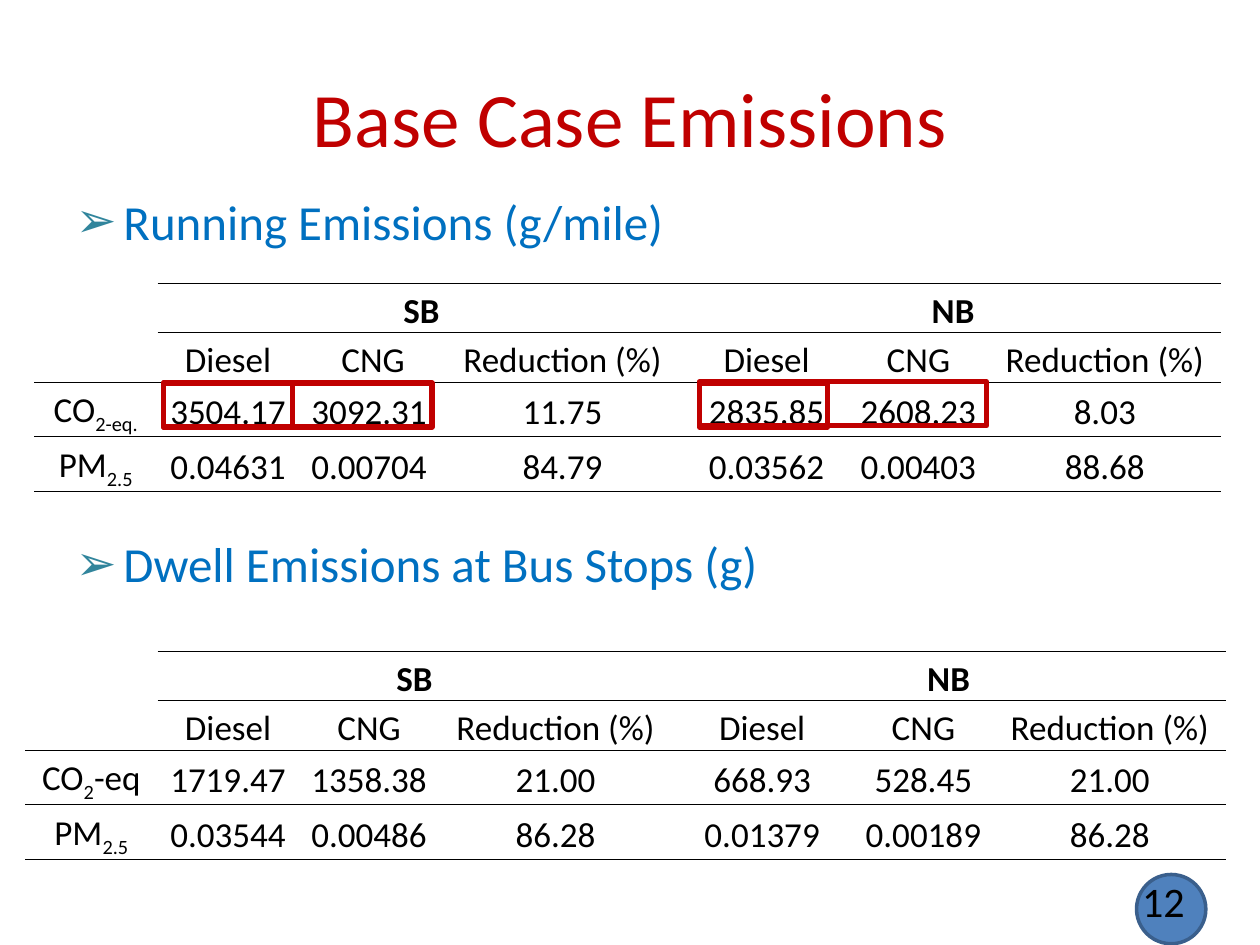
"""Build the base case emissions slide with its two emission tables."""
from dataclasses import dataclass

import lxml.etree
import pptx
import pptx.dml.color
import pptx.enum.shapes
import pptx.enum.text
import pptx.oxml.ns
import pptx.util

COLORS = {
    "title": "C00000",
    "heading": "0070C0",
    "bullet": "31859C",
    "text": "000000",
    "highlight": "C00000",
    "badge": "4F81BD",
    "badge_edge": "3A5F8C",
}
FONT = "Calibri"
GRID_COLUMNS, GRID_ROWS = 100, 75
NO_STYLE = "{2D5ABB26-0587-4C30-8999-92F81FD0307C}"
ALIGN = pptx.enum.text.PP_ALIGN
ANCHOR = pptx.enum.text.MSO_ANCHOR
SHAPE = pptx.enum.shapes.MSO_SHAPE

show = pptx.Presentation()
show.slide_width = pptx.util.Inches(10)
show.slide_height = pptx.util.Inches(7.5)
COLUMN = show.slide_width / GRID_COLUMNS
ROW = show.slide_height / GRID_ROWS


@dataclass
class Area:
    left: float
    top: float
    width: float
    height: float

    def place(self) -> tuple:
        return (round(self.left * COLUMN), round(self.top * ROW),
                round(self.width * COLUMN), round(self.height * ROW))


@dataclass
class EmissionTable:
    area: Area
    columns: list
    rows: list


def rgb(name: str):
    return pptx.dml.color.RGBColor.from_string(COLORS[name])


def format_run(run, size: float, color: str, bold: bool = False) -> None:
    run.font.name = FONT
    run.font.size = pptx.util.Pt(size)
    run.font.bold = bold
    run.font.color.rgb = rgb(color)


def add_xml(parent, tag: str, **attributes: str):
    return lxml.etree.SubElement(parent, pptx.oxml.ns.qn(tag), **attributes)


def move(shape, area: Area) -> None:
    shape.left, shape.top, shape.width, shape.height = area.place()


def fill_title(title) -> None:
    move(title, Area(5, 6.1, 90, 12.5))
    frame = title.text_frame
    frame.text = "Base Case Emissions"
    frame.auto_size = pptx.enum.text.MSO_AUTO_SIZE.NONE
    frame.vertical_anchor = ANCHOR.TOP
    frame.margin_top = 0
    frame.paragraphs[0].alignment = ALIGN.CENTER
    frame.paragraphs[0].line_spacing = 0.95
    format_run(frame.paragraphs[0].runs[0], 44, "title")


def fill_headings(body, headings: dict) -> None:
    move(body, Area(5, 14.7, 90, 52.3))
    frame = body.text_frame
    frame.text = "\n".join(headings)
    frame.auto_size = pptx.enum.text.MSO_AUTO_SIZE.NONE
    indent = pptx.util.Inches(0.38)
    for paragraph, gap in zip(frame.paragraphs, headings.values()):
        paragraph.space_before = pptx.util.Pt(gap)
        format_run(paragraph.runs[0], 28, "heading")
        properties = paragraph._p.get_or_add_pPr()
        properties.set("marL", str(indent))
        properties.set("indent", str(-indent))
        add_xml(add_xml(properties, "a:buClr"), "a:srgbClr", val=COLORS["bullet"])
        add_xml(properties, "a:buChar", char="➢")


def add_border(cell, side: str, points: float) -> None:
    line = add_xml(cell._tc.get_or_add_tcPr(), side, w=str(pptx.util.Pt(points)))
    add_xml(add_xml(line, "a:solidFill"), "a:srgbClr", val=COLORS["text"])


def fill_cell(cell, text: str, bold: bool) -> None:
    """Write text whose odd parts between bars are subscripts."""
    cell.margin_left = cell.margin_right = pptx.util.Inches(0.08)
    cell.margin_top = cell.margin_bottom = 0
    cell.vertical_anchor = ANCHOR.MIDDLE
    paragraph = cell.text_frame.paragraphs[0]
    paragraph.alignment = ALIGN.CENTER
    paragraph.line_spacing = 1.15
    for index, part in enumerate(text.split("|") if text else []):
        run = paragraph.add_run()
        run.text = part
        format_run(run, 20, "text", bold)
        if index % 2:
            run._r.get_or_add_rPr().set("baseline", "-25000")


def draw_table(slide, emissions: EmissionTable) -> None:
    rows = [["", "SB", "", "", "NB", "", ""]] + emissions.rows
    last = len(rows) - 1
    table = slide.shapes.add_table(
        len(rows), len(emissions.columns), *emissions.area.place()).table
    table.first_row = table.horz_banding = False
    table._tbl.tblPr.find(pptx.oxml.ns.qn("a:tableStyleId")).text = NO_STYLE
    for column, width in zip(table.columns, emissions.columns):
        column.width = round(width * COLUMN)
    for first in (1, 4):
        table.cell(0, first).merge(table.cell(0, first + 2))
    for r, texts in enumerate(rows):
        for c, text in enumerate(texts):
            cell = table.cell(r, c)
            fill_cell(cell, text, bold=r == 0)
            if r == 0 and c > 0:
                add_border(cell, "a:lnT", 1)
            if r > 0 or c > 0:
                add_border(cell, "a:lnB", 1 if r == last else 0.5)
            cell.fill.background()


def draw_outline(slide, kind, area: Area, line: str, points: float):
    shape = slide.shapes.add_shape(kind, *area.place())
    shape.shadow.inherit = False
    shape.fill.background()
    shape.line.color.rgb = rgb(line)
    shape.line.width = pptx.util.Pt(points)
    return shape


def draw_page_number(slide, number: str) -> None:
    badge = draw_outline(slide, SHAPE.OVAL, Area(90.2, 69.4, 5.5, 5.5), "badge_edge", 2)
    badge.fill.solid()
    badge.fill.fore_color.rgb = rgb("badge")
    frame = slide.shapes.add_textbox(*Area(71.7, 69.5, 23.3, 4).place()).text_frame
    frame.word_wrap = True
    frame.vertical_anchor = ANCHOR.MIDDLE
    frame.text = number
    frame.paragraphs[0].alignment = ALIGN.RIGHT
    format_run(frame.paragraphs[0].runs[0], 24, "text")


FUELS = ["Diesel", "CNG", "Reduction (%)"]
RUNNING = EmissionTable(
    Area(2.7, 22.5, 94.3, 15.3),
    [9.8, 11.2, 11.2, 19.5, 12.9, 11.2, 18.4],
    [["", "Diesel", " CNG", "Reduction (%)", *FUELS],
     ["CO|2-eq.", "3504.17", "3092.31", "11.75", "2835.85", "2608.23", "8.03"],
     ["PM|2.5", "0.04631", "0.00704", "84.79", "0.03562", "0.00403", "88.68"]])
DWELL = EmissionTable(
    Area(2, 51.7, 95.5, 15.3),
    [10.5, 11.2, 11.2, 18.4, 14.4, 11.2, 18.4],
    [["", *FUELS, *FUELS],
     ["CO|2|-eq", "1719.47", "1358.38", "21.00", "668.93", "528.45", "21.00"],
     ["PM|2.5", "0.03544", "0.00486", "86.28", "0.01379", "0.00189", "86.28"]])
HIGHLIGHTS = [
    Area(13, 30.4, 10.2, 3.5),
    Area(55.5, 30.4, 10.2, 3.5),
    Area(13, 30.4, 21.3, 3.5),
    Area(55.5, 30.3, 22.8, 3.5),
]


def main() -> None:
    slide = show.slides.add_slide(show.slide_layouts[1])
    fill_title(slide.shapes.title)
    fill_headings(slide.placeholders[1], {
        "Running Emissions (g/mile)": 2,
        "Dwell Emissions at Bus Stops (g)": 162,
    })
    for emissions in (RUNNING, DWELL):
        draw_table(slide, emissions)
    draw_page_number(slide, "12")
    for area in HIGHLIGHTS:
        draw_outline(slide, SHAPE.RECTANGLE, area, "highlight", 3)
    show.save("out.pptx")


if __name__ == "__main__":
    main()
